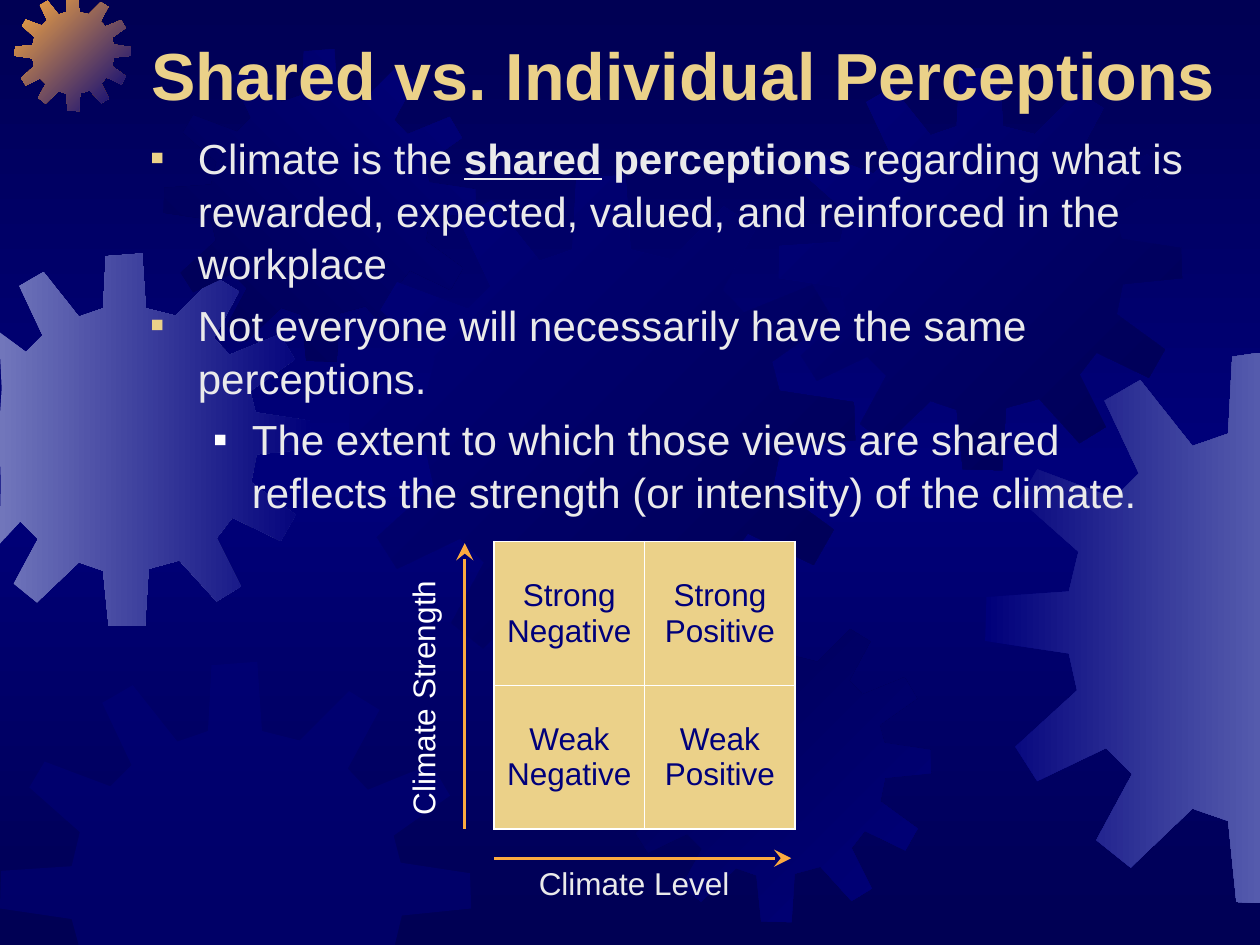
from copy import deepcopy

from lxml import etree
from pptx import Presentation
from pptx.dml.color import RGBColor
from pptx.enum.shapes import MSO_CONNECTOR
from pptx.enum.text import MSO_ANCHOR, PP_ALIGN
from pptx.oxml.ns import qn
from pptx.util import Cm, Pt

STRAIGHT = MSO_CONNECTOR.STRAIGHT
MIDDLE = MSO_ANCHOR.MIDDLE
LEFT, CENTER = PP_ALIGN.LEFT, PP_ALIGN.CENTER
WIDE, HIGH = 25.4, 19.05
NAVY, BLUE, SAND, ORANGE = "000054", "00007A", "EBD189", "FCAB40"
PALE, WHITE = "EAEAEA", "FFFFFF"

SPAN = 401
TEETH = [
    (255, 67), (223, 59), (219, 0), (180, 3), (177, 59), (151, 68),
    (113, 20), (87, 35), (112, 88), (94, 106), (38, 85), (25, 107),
    (68, 145), (61, 174), (1, 178), (0, 210), (61, 219), (67, 246),
    (22, 287), (38, 312), (88, 288), (107, 307), (81, 355), (106, 375),
    (151, 332), (177, 341), (183, 400), (222, 401), (226, 339), (259, 330),
    (299, 374), (325, 358), (299, 306), (316, 284), (368, 309), (384, 281),
    (336, 246), (342, 216), (401, 210), (400, 180), (341, 171), (335, 148),
    (383, 114), (367, 87), (313, 109), (296, 91), (323, 41), (297, 25),
]
GEARS = [
    (-1.24, 5.11, 7.52, ("7176BB", BLUE), 0),
    (0.3, -0.1, 2.34, (ORANGE, BLUE), 45),
    (3.3, 0.99, 6.3, (NAVY, BLUE), 315),
    (7.04, 3.53, 10.2, (BLUE, NAVY), 45),
    (0, 13.34, 9.5, (BLUE,), 0),
    (12.47, 12.29, 6.3, (NAVY, BLUE), 45),
    (15.7, 1.35, 8.13, (BLUE, NAVY), 45),
    (19.86, 7.11, 11.1, (BLUE, "555BAD"), 0),
]
POINTS = [
    (0, SAND, 0.97, -0.97, [
        ("Climate is the ", False, False),
        ("shared", True, True),
        (" perceptions ", True, False),
        ("regarding what is rewarded, expected, valued, and reinforced "
         "in the workplace", False, False)]),
    (0, SAND, 0.97, -0.97, [
        ("Not everyone will necessarily have the same perceptions.",
         False, False)]),
    (1, WHITE, 2.06, -0.79, [
        ("The extent to which those views are shared reflects the strength "
         "(or intensity) of the climate.", False, False)]),
]
GRID = [["Strong Negative", "Strong Positive"],
        ["Weak Negative", "Weak\nPositive"]]


def color(text):
    return RGBColor.from_string(text)


def cms(*sizes):
    return [Cm(size) for size in sizes]


def clamp(size, top):
    return Cm(min(max(size, 0), top))


class Deck:
    """Holds the text style and the current slide."""

    def __init__(self, font="Arial"):
        self.font = font
        self.prs = Presentation()
        self.prs.slide_width, self.prs.slide_height = cms(WIDE, HIGH)
        self.slide = self.prs.slides.add_slide(self.prs.slide_layouts[5])
        self.shapes = self.slide.shapes

    def style(self, run, size, shade, bold=False, under=False):
        font = run.font
        font.name, font.size = self.font, Pt(size)
        font.bold, font.underline = bold, under
        font.color.rgb = color(shade)

    def blend(self, fill, shades, angle):
        fill.gradient_angle = 360 - angle if angle else 0
        last = len(shades) - 1
        for i, (stop, shade) in enumerate(zip(fill.gradient_stops, shades)):
            stop.position = i / last
            stop.color.rgb = color(shade)

    def backdrop(self, shades, angle):
        fill = self.slide.background.fill
        fill.gradient()
        stops = next(self.slide.element.iter(qn("a:gsLst")))
        for _ in shades[2:]:
            stops.append(deepcopy(stops[-1]))
        self.blend(fill, shades, angle)

    def gear(self, left, top, size, shades, angle):
        unit = size / SPAN
        dots = [(clamp(left + x * unit, WIDE), clamp(top + y * unit, HIGH))
                for x, y in TEETH]
        path = self.shapes.build_freeform(*dots[0])
        path.add_line_segments(dots[1:], close=True)
        shape = path.convert_to_shape()
        shape.shadow.inherit = False
        shape.line.fill.background()
        if len(shades) > 1:
            shape.fill.gradient()
            self.blend(shape.fill, shades, angle)
        else:
            shape.fill.solid()
            shape.fill.fore_color.rgb = color(shades[0])
            tint = next(shape.element.spPr.iter(qn("a:srgbClr")))
            etree.SubElement(tint, qn("a:alpha")).set("val", "50000")

    def title(self, text, box):
        shape = self.shapes.title
        self.shapes.element.append(shape.element)
        shape.left, shape.top, shape.width, shape.height = cms(*box)
        frame = shape.text_frame
        frame.text = text
        frame.vertical_anchor = MIDDLE
        para = frame.paragraphs[0]
        para.alignment = LEFT
        self.style(para.runs[0], 38, SAND, True)

    def bullets(self, items, box):
        frame = self.shapes.add_textbox(*cms(*box)).text_frame
        frame.word_wrap = True
        for i, (level, mark, left, hang, parts) in enumerate(items):
            para = frame.add_paragraph() if i else frame.paragraphs[0]
            para.level = level
            para.line_spacing = 1.05
            if i:
                para.space_before = Pt(4.8)
            props = para._p.get_or_add_pPr()
            props.set("marL", str(Cm(left)))
            props.set("indent", str(Cm(hang)))
            tint = etree.SubElement(props, qn("a:buClr"))
            etree.SubElement(tint, qn("a:srgbClr")).set("val", mark)
            etree.SubElement(props, qn("a:buFont")).set("typeface", self.font)
            etree.SubElement(props, qn("a:buChar")).set("char", "▪")
            for text, bold, under in parts:
                run = para.add_run()
                run.text = text
                self.style(run, 24, PALE, bold, under)

    def table(self, rows, box):
        frame = self.shapes.add_table(len(rows), len(rows[0]), *cms(*box))
        table = frame.table
        table.first_row = table.horz_banding = False
        for r, row in enumerate(rows):
            for c, text in enumerate(row):
                cell = table.cell(r, c)
                cell.fill.solid()
                cell.fill.fore_color.rgb = color(SAND)
                cell.vertical_anchor = MIDDLE
                cell.text_frame.text = text
                for para in cell.text_frame.paragraphs:
                    para.alignment = CENTER
                    self.style(para.runs[0], 18, BLUE)

    def label(self, text, box, shade, turn=0):
        shape = self.shapes.add_textbox(*cms(*box))
        shape.rotation = turn
        frame = shape.text_frame
        frame.word_wrap = False
        frame.text = text
        para = frame.paragraphs[0]
        para.alignment = CENTER
        self.style(para.runs[0], 18, shade)

    def arrow(self, *ends):
        line = self.shapes.add_connector(STRAIGHT, *cms(*ends))
        line.line.color.rgb = color(ORANGE)
        line.line.width = Pt(1.5)
        tip = etree.SubElement(line.line._get_or_add_ln(), qn("a:tailEnd"))
        for key, val in (("type", "stealth"), ("w", "lg"), ("len", "lg")):
            tip.set(key, val)
        etree.SubElement(line.element.spPr, qn("a:effectLst"))


def main():
    deck = Deck()
    deck.backdrop((NAVY, BLUE, NAVY), 90)
    for gear in GEARS:
        deck.gear(*gear)
    deck.title("Shared vs. Individual Perceptions", (2.79, -0.1, 22.43, 3.17))
    deck.bullets(POINTS, (2.77, 2.49, 21.59, 11.43))
    deck.table(GRID, (9.96, 10.92, 6.07, 5.79))
    deck.label("Climate Level", (10.59, 17.3, 4.39, 1.02), PALE)
    deck.label("Climate Strength", (5.89, 13.56, 5.28, 1.02), WHITE, 270)
    deck.arrow(9.96, 17.3, 15.95, 17.3)
    deck.arrow(9.37, 16.71, 9.37, 10.95)
    deck.prs.save("out.pptx")


if __name__ == "__main__":
    main()
